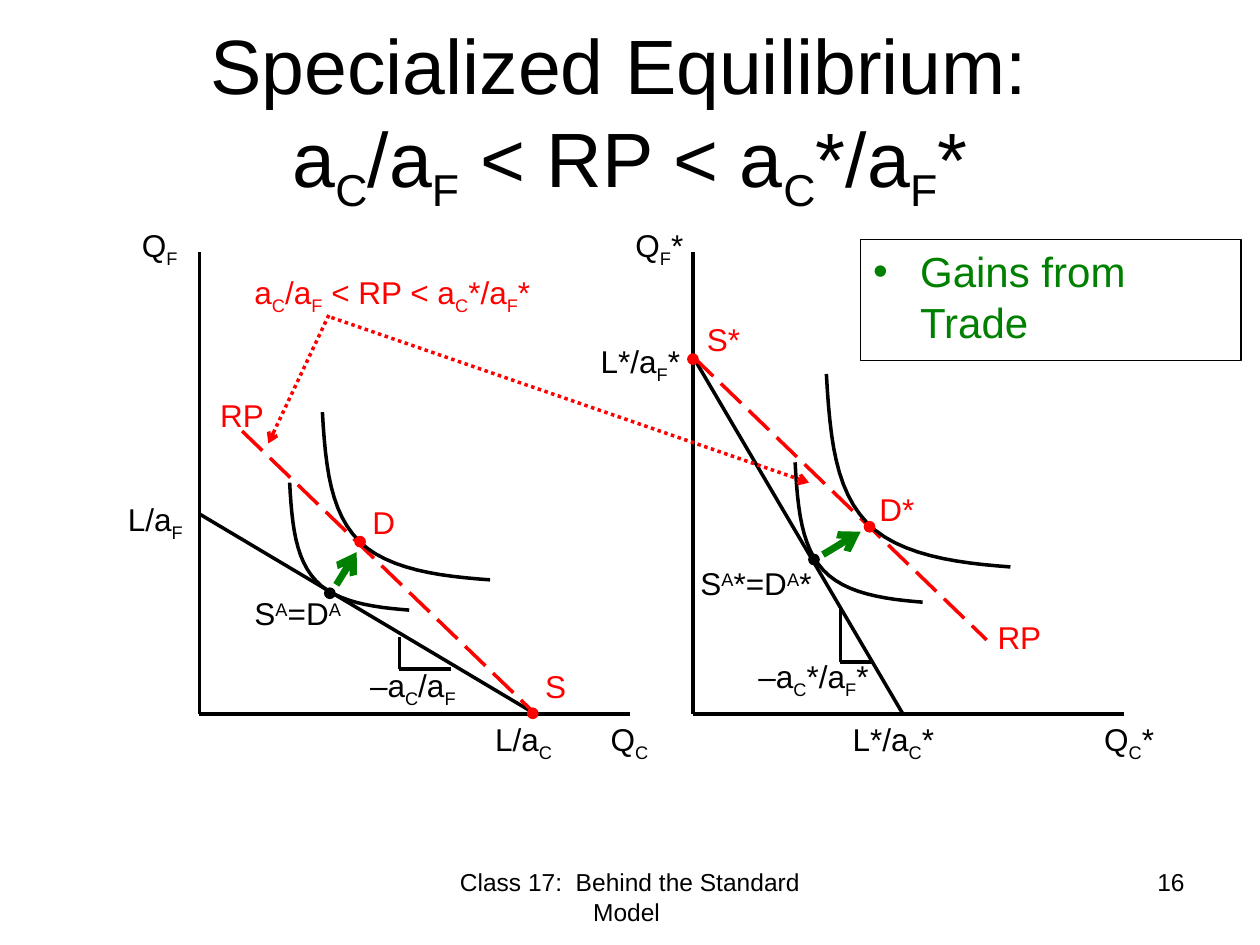
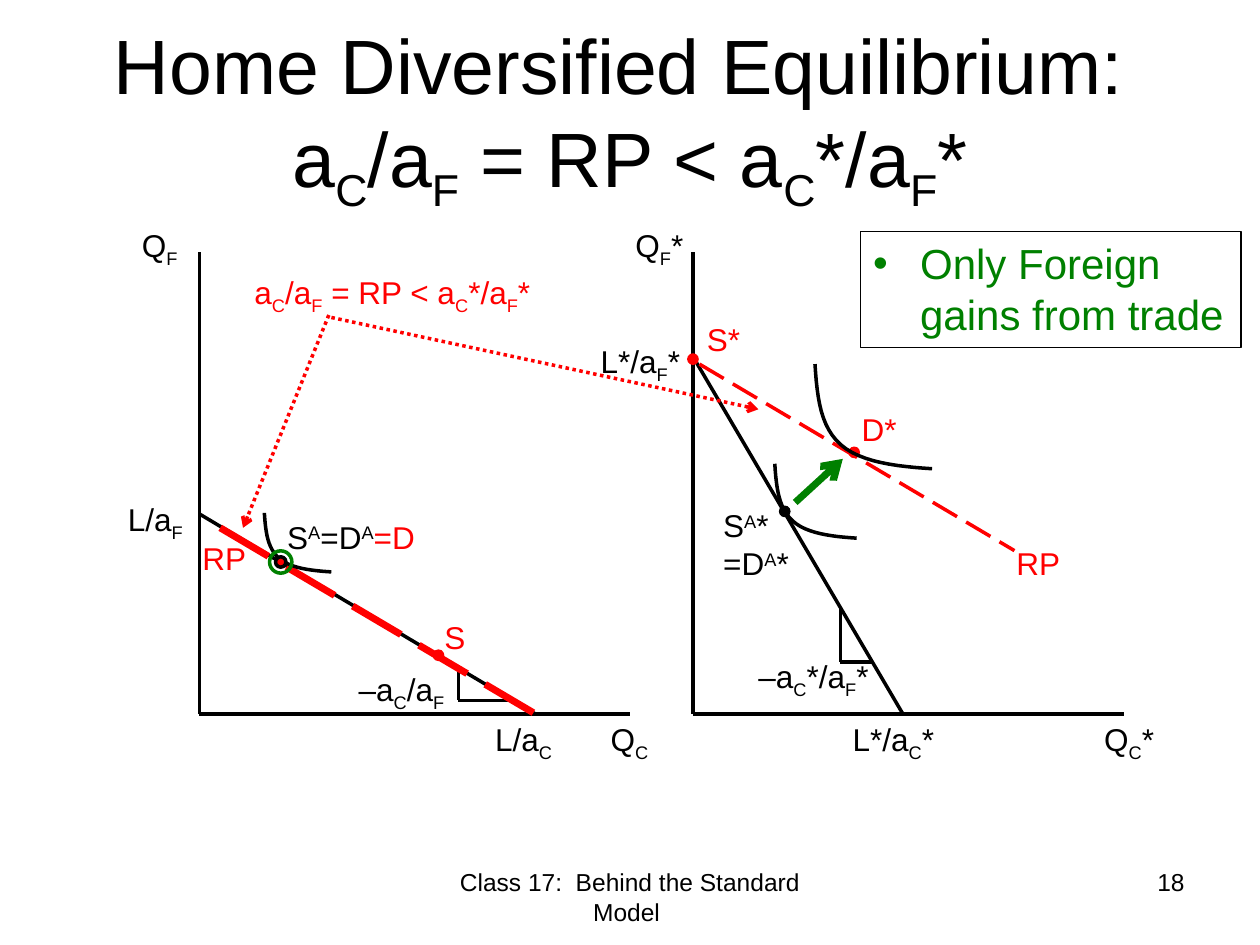
from lxml import etree
from pptx import Presentation
from pptx.dml.color import RGBColor
from pptx.enum.dml import MSO_LINE
from pptx.enum.shapes import MSO_CONNECTOR, MSO_SHAPE
from pptx.enum.text import MSO_ANCHOR, PP_ALIGN
from pptx.oxml.ns import qn
from pptx.util import Cm, Pt

BLACK = RGBColor(0x00, 0x00, 0x00)
RED = RGBColor(0xFF, 0x00, 0x00)
GREEN = RGBColor(0x00, 0x80, 0x00)
FONT = "Arial"
DASH, DOTS = MSO_LINE.LONG_DASH, MSO_LINE.ROUND_DOT
STRAIGHT = MSO_CONNECTOR.STRAIGHT
RECT, OVAL = MSO_SHAPE.RECTANGLE, MSO_SHAPE.OVAL
LEFT, CENTER, RIGHT = PP_ALIGN.LEFT, PP_ALIGN.CENTER, PP_ALIGN.RIGHT
TOP, MIDDLE = MSO_ANCHOR.TOP, MSO_ANCHOR.MIDDLE

PLOT_W, PLOT_H = 8.68, 9.31
HOME, FOREIGN = (4.02, 5.08), (13.97, 5.08)
DOT = 0.21
BASELINES = {"_": "-25000", "^": "30000"}
# Two Bezier arcs of an indifference curve, as fractions of its box
ARCS = [[(0, 0), (0.02, 0.34), (0.05, 0.6), (0.22, 0.77)],
        [(0.22, 0.77), (0.39, 0.94), (0.71, 0.98), (1, 1)]]


def add_rich(p, text, size, color):
    """Add runs; {_x} is a subscript, {^x} a superscript, {!x} is red."""
    for i, piece in enumerate(text.replace("}", "{").split("{")):
        if not piece:
            continue
        mark, words = (piece[0], piece[1:]) if i % 2 else ("", piece)
        r = p.add_run()
        r.text = words
        for name, value in {"name": FONT, "size": Pt(size)}.items():
            setattr(r.font, name, value)
        r.font.color.rgb = RED if mark == "!" else color
        if mark in BASELINES:
            r.font._element.set("baseline", BASELINES[mark])


def write(sp, paragraphs, size, color=BLACK, align=LEFT, anchor=TOP):
    """Fill a shape; each paragraph is a list of lines."""
    tf = sp.text_frame
    for name, value in {"word_wrap": True, "vertical_anchor": anchor}.items():
        setattr(tf, name, value)
    for i, lines in enumerate(paragraphs):
        p = tf.add_paragraph() if i else tf.paragraphs[0]
        p.alignment = align
        for j, line in enumerate(lines):
            if j:
                p.add_line_break()
            add_rich(p, line, size, color)


def add_box(s, x, y, w, h):
    return s.shapes.add_textbox(Cm(x), Cm(y), Cm(w), Cm(h))


def outline(sp, color, width):
    sp.line.color.rgb = color
    sp.line.width = Pt(width)


class Plot:
    """Draws on a slide with lengths in cm from the top left of a plot."""

    def __init__(self, s, origin):
        self.s = s
        self.x, self.y = origin

    def line(self, x1, y1, x2, y2, color=BLACK, width=2, dash=None, arrow=False):
        sp = self.s.shapes.add_connector(
            STRAIGHT, Cm(self.x + x1), Cm(self.y + y1),
            Cm(self.x + x2), Cm(self.y + y2))
        outline(sp, color, width)
        if dash:
            sp.line.dash_style = dash
        if arrow:
            ln = sp.line._get_or_add_ln()
            etree.SubElement(ln, qn("a:tailEnd")).set("type", "arrow")
        etree.SubElement(sp._element.spPr, qn("a:effectLst"))

    def label(self, x, y, w, *paragraphs, color=BLACK):
        sp = add_box(self.s, self.x + x, self.y + y, w, 1.02 * len(paragraphs))
        write(sp, [[text] for text in paragraphs], 18, color)

    def dot(self, x, y, color, edge=None, width=0.75, size=DOT, filled=True):
        sp = self.s.shapes.add_shape(
            OVAL, Cm(self.x + x - size / 2), Cm(self.y + y - size / 2),
            Cm(size), Cm(size))
        sp.shadow.inherit = False
        if filled:
            sp.fill.solid()
            sp.fill.fore_color.rgb = color
        else:
            sp.fill.background()
        outline(sp, edge or color, width)

    def indifference_curve(self, x, y, w, h, steps=12):
        points = []
        for arc in ARCS:
            for k in range(steps + 1):
                t = k / steps
                weights = ((1 - t) ** 3, 3 * t * (1 - t) ** 2,
                           3 * t * t * (1 - t), t ** 3)
                fx, fy = (sum(b * q[axis] for b, q in zip(weights, arc))
                          for axis in (0, 1))
                points.append((Cm(self.x + x + fx * w), Cm(self.y + y + fy * h)))
        builder = self.s.shapes.build_freeform(*points[0])
        builder.add_line_segments(points[1:], close=False)
        sp = builder.convert_to_shape()
        sp.shadow.inherit = False
        sp.fill.background()
        outline(sp, BLACK, 2)

    def axes(self, star=""):
        self.line(0, PLOT_H, PLOT_W, PLOT_H)
        self.line(0, PLOT_H, 0, 0)
        self.label(8.04, PLOT_H, 1.9, "Q{_C}" + star)
        self.label(-1.41, -0.64, 1.9, "Q{_F}" + star)

    def slope(self, x, y, w, h):
        """Right angle under the frontier, with its corner at x, y."""
        self.line(x, y - h, x, y)
        self.line(x + w, y, x, y)

    def world_price(self, start, end, label_at, width=2):
        self.line(*start, *end, RED, width, DASH)
        self.label(*label_at, 1.4, "RP", color=RED)

    def gain(self, start, end):
        self.line(*start, *end, GREEN, 4, arrow=True)


def home_frame(s, slope_at, slope_label_at):
    plot = Plot(s, HOME)
    plot.axes()
    plot.line(0, 5.28, 6.77, PLOT_H)
    plot.label(-1.69, 4.88, 1.68, "L/a{_F}")
    plot.label(5.71, PLOT_H, 1.7, "L/a{_C}")
    plot.slope(*slope_at, 1.04, 0.64)
    plot.label(*slope_label_at, 2.34, "–a{_C}/a{_F}")
    return plot


def foreign_frame(s):
    plot = Plot(s, FOREIGN)
    plot.axes("*")
    plot.line(0, 2.11, 4.23, PLOT_H)
    plot.label(-2.11, 1.7, 2.16, "L*/a{_F}*")
    plot.label(2.97, PLOT_H, 2.21, "L*/a{_C}*")
    plot.slope(2.97, 8.26, 0.64, 1.07)
    plot.label(1.07, 8.05, 2.82, "–a{_C}*/a{_F}*")
    plot.label(0.03, 1.24, 1.19, "S*", color=RED)
    return plot


def price_note(home, condition, home_tip, foreign_tip):
    home.label(0.86, 0.3, 7.62, condition, color=RED)
    home.line(2.61, 1.27, *home_tip, RED, 2, DOTS, True)
    home.line(2.66, 1.32, *foreign_tip, RED, 2, DOTS, True)


def gains_box(s, y, h, text):
    sp = s.shapes.add_shape(RECT, Cm(17.35), Cm(y), Cm(7.67), Cm(h))
    sp.shadow.inherit = False
    sp.fill.background()
    outline(sp, BLACK, 0.75)
    write(sp, [[text]], 24, GREEN)
    p = sp.text_frame.paragraphs[0]
    p.space_before = Pt(4.8)
    pPr = p._p.get_or_add_pPr()
    for name, indent in {"marL": Cm(0.95), "indent": -Cm(0.95)}.items():
        pPr.set(name, str(int(indent)))
    etree.SubElement(pPr, qn("a:buFont")).set("typeface", FONT)
    etree.SubElement(pPr, qn("a:buChar")).set("char", "•")


def add_slide(prs, heading, condition, number):
    s = prs.slides.add_slide(prs.slide_layouts[6])
    write(add_box(s, 0.85, 0.76, 23.7, 3.18), [[heading, condition]], 44,
          align=CENTER, anchor=MIDDLE)
    write(add_box(s, 8.68, 17.36, 8.04, 1.32),
          [["Class 17:  Behind the Standard Model "]], 14, align=CENTER)
    write(add_box(s, 18.2, 17.36, 5.93, 1.32), [[number]], 14, align=RIGHT)
    return s


def specialized_slide(prs):
    condition = "a{_C}/a{_F} < RP < a{_C}*/a{_F}*"
    s = add_slide(prs, "Specialized Equilibrium: ", condition, "16")

    home = home_frame(s, (4.03, 8.41), (3.19, 8.23))
    home.world_price((0.86, 3.61), (6.77, PLOT_H), (0.17, 2.77))
    home.indifference_curve(2.48, 3.23, 3.38, 3.38)
    home.indifference_curve(1.82, 4.65, 2.41, 2.57)
    home.gain((2.76, 6.71), (3.17, 6.05))
    home.dot(6.72, 9.3, RED)
    home.dot(3.24, 5.84, RED)
    home.dot(2.63, 6.88, BLACK)
    home.label(6.72, 8.25, 0.94, "S", color=RED)
    home.label(3.24, 4.93, 0.97, "D", color=RED)
    home.label(0.86, 6.78, 2.36, "S{^A}=D{^A}")

    foreign = foreign_frame(s)
    foreign.world_price((0, 2.11), (5.92, 7.82), (5.89, 7.26))
    foreign.indifference_curve(2.69, 2.46, 3.71, 3.89)
    foreign.indifference_curve(2.06, 4.24, 2.57, 2.82)
    foreign.gain((2.62, 6.1), (3.38, 5.64))
    foreign.dot(0, 2.16, RED)
    foreign.dot(3.56, 5.54, RED)
    foreign.dot(2.44, 6.2, BLACK)
    foreign.label(3.51, 4.67, 1.22, "D*", color=RED)
    foreign.label(-0.1, 6.17, 2.84, "S{^A}*=D{^A}*")

    price_note(home, condition, (1.39, 3.86), (12.29, 4.65))
    gains_box(s, 4.83, 2.44, "Gains from Trade")


def home_diversified_slide(prs):
    condition = "a{_C}/a{_F} = RP < a{_C}*/a{_F}*"
    s = add_slide(prs, "Home Diversified Equilibrium: ", condition, "18")

    home = home_frame(s, (5.22, 9.04), (2.96, 8.31))
    home.world_price((0.42, 5.56), (6.77, PLOT_H), (-0.19, 5.66), 4)
    home.indifference_curve(1.31, 5.26, 1.35, 1.19)
    home.dot(4.82, 8.13, RED)
    home.dot(1.64, 6.25, RED, BLACK, 2)
    home.dot(1.64, 6.25, GREEN, width=2, size=0.45, filled=False)
    home.label(4.69, 7.26, 0.94, "S", color=RED)
    home.label(1.52, 5.23, 3.18, "S{^A}=D{^A}{!=D}")

    foreign = foreign_frame(s)
    foreign.world_price((0.13, 2.26), (6.48, 6.02), (6.27, 5.77))
    foreign.dot(0, 2.16, RED)
    foreign.dot(3.25, 4.04, RED)
    foreign.indifference_curve(2.46, 2.26, 2.36, 2.11)
    foreign.indifference_curve(1.65, 4.27, 1.65, 1.5)
    foreign.gain((2.06, 5.05), (3.02, 4.17))
    foreign.dot(1.85, 5.23, BLACK)
    foreign.label(3.15, 3.07, 1.22, "D*", color=RED)
    foreign.label(0.36, 5, 1.88, "S{^A}*", "=D{^A}*")

    price_note(home, condition, (0.88, 5.56), (11.27, 3.17))
    gains_box(s, 4.67, 2.34, "Only Foreign gains from trade")


def main():
    prs = Presentation()
    prs.slide_width, prs.slide_height = Cm(25.4), Cm(19.05)
    specialized_slide(prs)
    home_diversified_slide(prs)
    prs.save("out.pptx")


if __name__ == "__main__":
    main()
